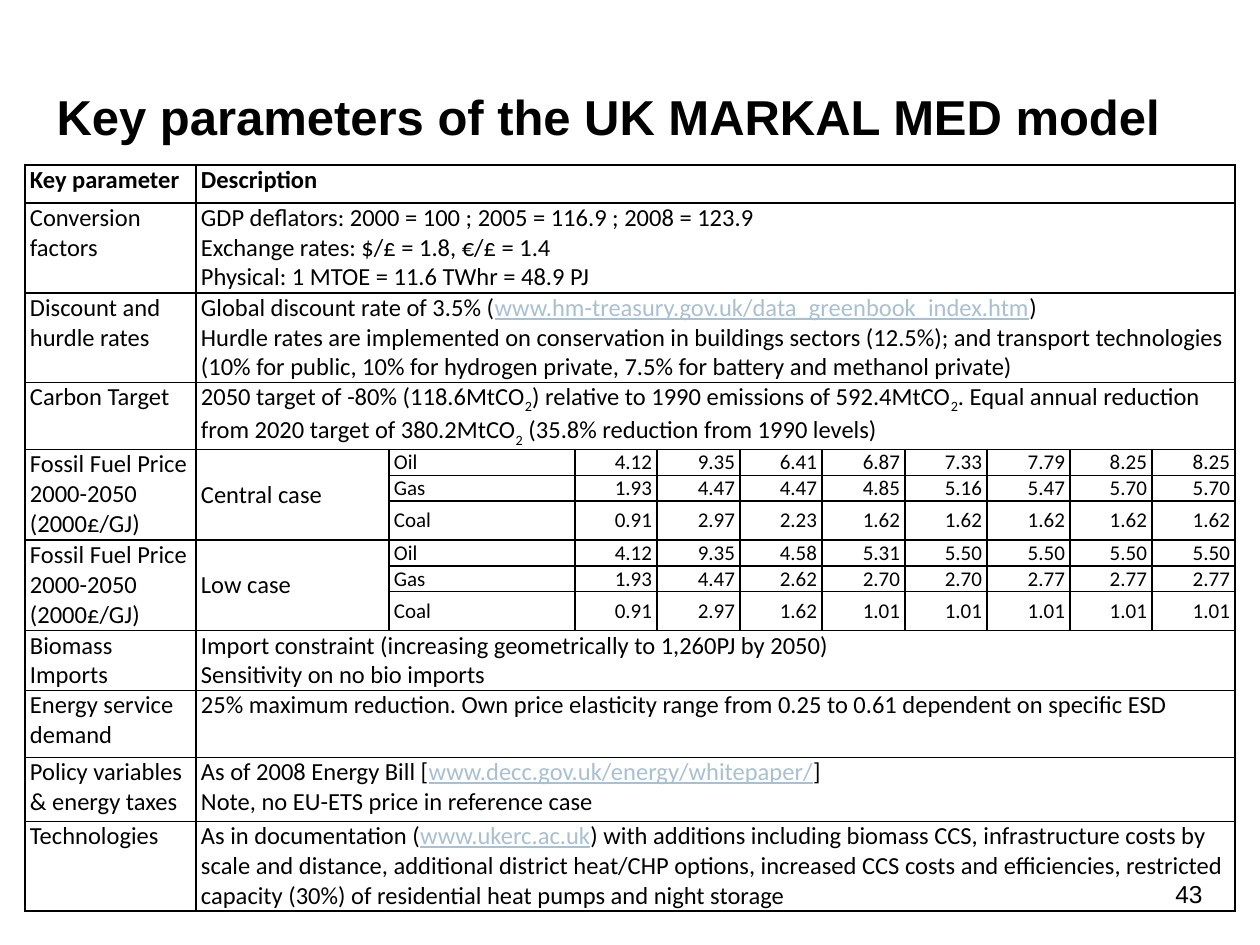
from dataclasses import dataclass

from pptx import Presentation
from pptx.dml.color import RGBColor
from pptx.enum.text import MSO_ANCHOR, PP_ALIGN
from pptx.oxml import parse_xml
from pptx.oxml.ns import nsdecls
from pptx.util import Pt

PX = 914400 / 126
LEFT, RIGHT = PP_ALIGN.LEFT, PP_ALIGN.RIGHT
TOP, MIDDLE = MSO_ANCHOR.TOP, MSO_ANCHOR.MIDDLE

COLS = [171, 193, 186] + [82, 83] * 4
CASE = [26, 25, 39]
ROWS = [38, 90, 89, 67] + CASE * 2 + [59, 67, 64, 89]

# A bar splits a line into runs; web addresses and a lone 2 get their own look.
FACTS = {
    0: ("Key parameter", ["Description"]),
    1: ("Conversion factors", [
        "GDP deflators: 2000 = 100 ; 2005 = 116.9 ; 2008 = 123.9",
        "Exchange rates: $/£ = 1.8, €/£ = 1.4",
        "Physical: 1 MTOE = 11.6 TWhr = 48.9 PJ"]),
    2: ("Discount and hurdle rates", [
        "Global discount rate of 3.5% (|www.hm-treasury.gov.uk/data_greenbook_index.htm|)",
        "Hurdle rates are implemented on conservation in buildings sectors (12.5%); "
        "and transport technologies (10% for public, 10% for hydrogen private, "
        "7.5% for battery and methanol private)"]),
    3: ("Carbon Target", [
        "2050 target of -80% (118.6MtCO|2|) relative to 1990 emissions of 592.4MtCO|2|. "
        "Equal annual reduction from 2020 target of 380.2MtCO|2| "
        "(35.8% reduction from 1990 levels)"]),
    10: ("Biomass Imports", [
        "Import constraint (increasing geometrically to 1,260PJ by 2050)",
        "Sensitivity on no bio imports"]),
    11: ("Energy service demand", [
        "25% maximum reduction. Own price elasticity range from 0.25 to 0.61 "
        "dependent on specific ESD"]),
    12: ("Policy variables & energy taxes", [
        "As of 2008 Energy Bill [|www.decc.gov.uk/energy/whitepaper/|]",
        "Note, no EU-ETS price in reference case"]),
    13: ("Technologies", [
        "As in documentation (|www.ukerc.ac.uk|) with additions including biomass CCS, "
        "infrastructure costs by scale and distance, additional district heat/CHP options, "
        "increased CCS costs and efficiencies, restricted capacity (30%) of residential "
        "heat pumps and night storage"]),
}
PRICES = {
    4: ("Central case", [
        "Oil 4.12 9.35 6.41 6.87 7.33 7.79 8.25 8.25",
        "Gas 1.93 4.47 4.47 4.85 5.16 5.47 5.70 5.70",
        "Coal 0.91 2.97 2.23 1.62 1.62 1.62 1.62 1.62"]),
    7: ("Low case", [
        "Oil 4.12 9.35 4.58 5.31 5.50 5.50 5.50 5.50",
        "Gas 1.93 4.47 2.62 2.70 2.70 2.77 2.77 2.77",
        "Coal 0.91 2.97 1.62 1.01 1.01 1.01 1.01 1.01"]),
}


@dataclass
class Theme:
    ink: RGBColor = RGBColor(0, 0, 0)
    link: RGBColor = RGBColor(0xA8, 0xC0, 0xD1)
    head: str = "Arial"
    body: str = "Calibri"
    big: int = 28
    mid: int = 14
    small: int = 12


def px(n):
    return round(n * PX)


class Deck:
    def __init__(self, theme):
        self.theme = theme
        self.prs = Presentation()
        self.prs.slide_width, self.prs.slide_height = px(1260), px(945)
        self.slide = self.prs.slides.add_slide(self.prs.slide_layouts[5])

    def style(self, run, face, size, bold=False):
        font = run.font
        font.name, font.size, font.bold = face, Pt(size), bold
        font.color.rgb = self.theme.ink

    def title(self, text, x, y, w, h):
        box = self.slide.shapes.title
        box.left, box.top, box.width, box.height = map(px, (x, y, w, h))
        frame = box.text_frame
        frame.text = text
        frame.vertical_anchor = TOP
        frame.margin_top = px(10)
        line = frame.paragraphs[0]
        line.alignment = LEFT
        self.style(line.runs[0], self.theme.head, self.theme.big, True)

    def label(self, text, x, y, w, h):
        frame = self.slide.shapes.add_textbox(*map(px, (x, y, w, h))).text_frame
        frame.word_wrap = True
        frame.text = text
        line = frame.paragraphs[0]
        line.alignment = RIGHT
        self.style(line.runs[0], self.theme.head, self.theme.mid)

    def table(self, x, y, cols, rows):
        grid = self.slide.shapes.add_table(
            len(rows), len(cols), px(x), px(y), px(sum(cols)), px(sum(rows))).table
        grid.first_row = grid.horz_banding = False
        for col, w in zip(grid.columns, cols):
            col.width = px(w)
        for row, h in zip(grid.rows, rows):
            row.height = px(h)
        for cell in grid.iter_cells():
            self.frame(cell)
        return grid

    def frame(self, cell):
        """Clear the fill, set the insets and rule all four sides."""
        cell.margin_left = cell.margin_right = px(5)
        cell.margin_top = cell.margin_bottom = 0
        props = cell._tc.get_or_add_tcPr()
        for side in ("lnL", "lnR", "lnT", "lnB"):
            props.append(parse_xml(
                f'<a:{side} {nsdecls("a")} w="{Pt(1)}"><a:solidFill>'
                f'<a:srgbClr val="{self.theme.ink}"/></a:solidFill></a:{side}>'))
        cell.fill.background()

    def fill(self, cell, lines, size, bold=False, align=LEFT, anchor=TOP):
        cell.vertical_anchor = anchor
        frame = cell.text_frame
        for i, text in enumerate(lines):
            line = frame.add_paragraph() if i else frame.paragraphs[0]
            line.alignment = align
            for part in text.split("|"):
                run = line.add_run()
                run.text = part
                self.style(run, self.theme.body, size, bold)
                if part.startswith("www."):
                    run.font.color.rgb = self.theme.link
                    run.font.underline = True
                elif part == "2":
                    run._r.get_or_add_rPr().set("baseline", "-25000")


def main():
    theme = Theme()
    deck = Deck(theme)
    deck.title("Key parameters of the UK MARKAL MED model", 44, 76, 1169, 128)
    grid = deck.table(25, 165, COLS, ROWS)
    last = len(COLS) - 1
    for r, (name, lines) in FACTS.items():
        grid.cell(r, 1).merge(grid.cell(r, last))
        deck.fill(grid.cell(r, 0), [name], theme.mid, r == 0)
        deck.fill(grid.cell(r, 1), lines, theme.mid, r == 0)
    for top, (case, fuels) in PRICES.items():
        for c in (0, 1):
            grid.cell(top, c).merge(grid.cell(top + len(fuels) - 1, c))
        deck.fill(grid.cell(top, 0), ["Fossil Fuel Price 2000-2050", "(2000£/GJ)"], theme.mid)
        deck.fill(grid.cell(top, 1), [case], theme.mid, anchor=MIDDLE)
        for r, fuel in enumerate(fuels, top):
            for c, text in enumerate(fuel.split(), 2):
                deck.fill(grid.cell(r, c), [text], theme.small,
                          align=LEFT if c == 2 else RIGHT, anchor=MIDDLE)
    deck.label("43", 1076, 873, 139, 66)
    deck.prs.save("out.pptx")


if __name__ == "__main__":
    main()
